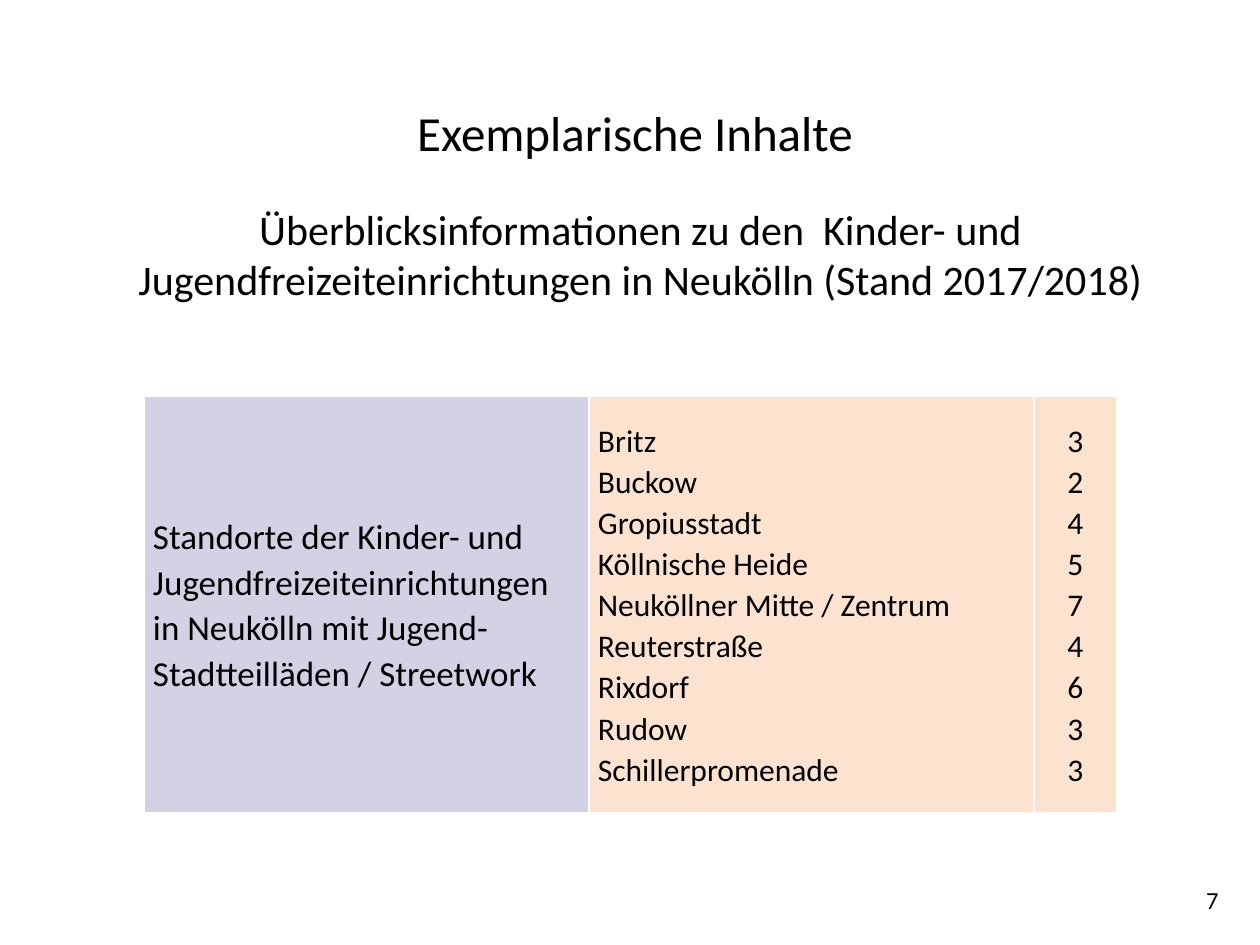
from lxml.etree import SubElement
from pptx import Presentation
from pptx.dml.color import RGBColor as RGB
from pptx.enum.text import MSO_ANCHOR as ANCHOR, PP_ALIGN as ALIGN
from pptx.oxml.ns import qn
from pptx.util import Emu, Pt

SCALE = 914400 / 126  # EMU per px
COLORS = {"text": "000000", "line": "FFFFFF", "lilac": "D3D1E4", "peach": "FCE3CF"}
TOPIC = ("Standorte der Kinder- und Jugendfreizeiteinrichtungen "
         "in Neukölln mit Jugend-Stadtteilläden / Streetwork")
SITES = {
    "Britz": 3, "Buckow": 2, "Gropiusstadt": 4, "Köllnische Heide": 5,
    "Neuköllner Mitte / Zentrum": 7, "Reuterstraße": 4, "Rixdorf": 6,
    "Rudow": 3, "Schillerpromenade": 3,
}


def px(num):
    return Emu(round(num * SCALE))


class Page:
    font = "Calibri"

    def __init__(self, slide):
        self.slide = slide

    def style(self, para, size, align=ALIGN.LEFT):
        para.alignment = align
        for run in para.runs:
            run.font.name = self.font
            run.font.size = Pt(size)
            run.font.color.rgb = RGB.from_string(COLORS["text"])

    def title(self, box, lines, sizes, gap):
        shape = self.slide.shapes.title
        shape.left, shape.top, shape.width, shape.height = map(px, box)
        frame = shape.text_frame
        frame.text = "\n".join(lines)
        frame.word_wrap = True
        frame.vertical_anchor = ANCHOR.TOP
        for para, size in zip(frame.paragraphs, sizes):
            self.style(para, size, ALIGN.CENTER)
            para.space_before = Pt(0)
        frame.paragraphs[-1].space_before = Pt(gap)

    def text(self, box, text, size, align):
        frame = self.slide.shapes.add_textbox(*map(px, box)).text_frame
        frame.word_wrap = True
        frame.text = text
        self.style(frame.paragraphs[0], size, align)

    def table(self, spot, cols, rows):
        shape = self.slide.shapes.add_table(
            len(rows), len(cols), *map(px, (*spot, sum(cols), sum(rows))))
        table = shape.table
        table.first_row = table.horz_banding = False
        for col, width in zip(table.columns, cols):
            col.width = px(width)
        for row, height in zip(table.rows, rows):
            row.height = px(height)
        for cell in table.iter_cells():
            self.border(cell)
            cell.fill.background()
        return table

    def border(self, cell):
        props = cell._tc.get_or_add_tcPr()
        for side in ("a:lnL", "a:lnR", "a:lnT", "a:lnB"):
            line = SubElement(props, qn(side), w=str(Pt(1)))
            fill = SubElement(line, qn("a:solidFill"))
            SubElement(fill, qn("a:srgbClr"), val=COLORS["line"])

    def cell(self, cell, lines, size, color, align=ALIGN.LEFT, after=0):
        cell.fill.solid()
        cell.fill.fore_color.rgb = RGB.from_string(COLORS[color])
        cell.vertical_anchor = ANCHOR.MIDDLE
        cell.margin_left = cell.margin_right = px(9)
        cell.margin_top = cell.margin_bottom = 0
        cell.text_frame.text = "\n".join(lines)
        for para in cell.text_frame.paragraphs:
            self.style(para, size, align)
            para.line_spacing = 1.07
            para.space_after = Pt(after)


def main():
    deck = Presentation()
    deck.slide_width, deck.slide_height = px(1260), px(945)
    page = Page(deck.slides.add_slide(deck.slide_layouts[5]))

    # Title and subtitle
    page.title((74, 96, 1133, 248), [
        "Exemplarische Inhalte ",
        "Überblicksinformationen zu den  Kinder- und "
        "Jugendfreizeiteinrichtungen in Neukölln (Stand 2017/2018)",
    ], (28, 24), 24)

    # Sites table, with an empty head row
    table = page.table((144, 344), (445, 445, 83), (52, 417))
    page.cell(table.cell(1, 0), [TOPIC], 20, "lilac", after=8)
    page.cell(table.cell(1, 1), SITES, 18, "peach")
    page.cell(table.cell(1, 2), map(str, SITES.values()), 18, "peach", ALIGN.CENTER)

    # Page number
    page.text((937, 879, 294, 66), "7", 14, ALIGN.RIGHT)
    deck.save("out.pptx")


if __name__ == "__main__":
    main()
